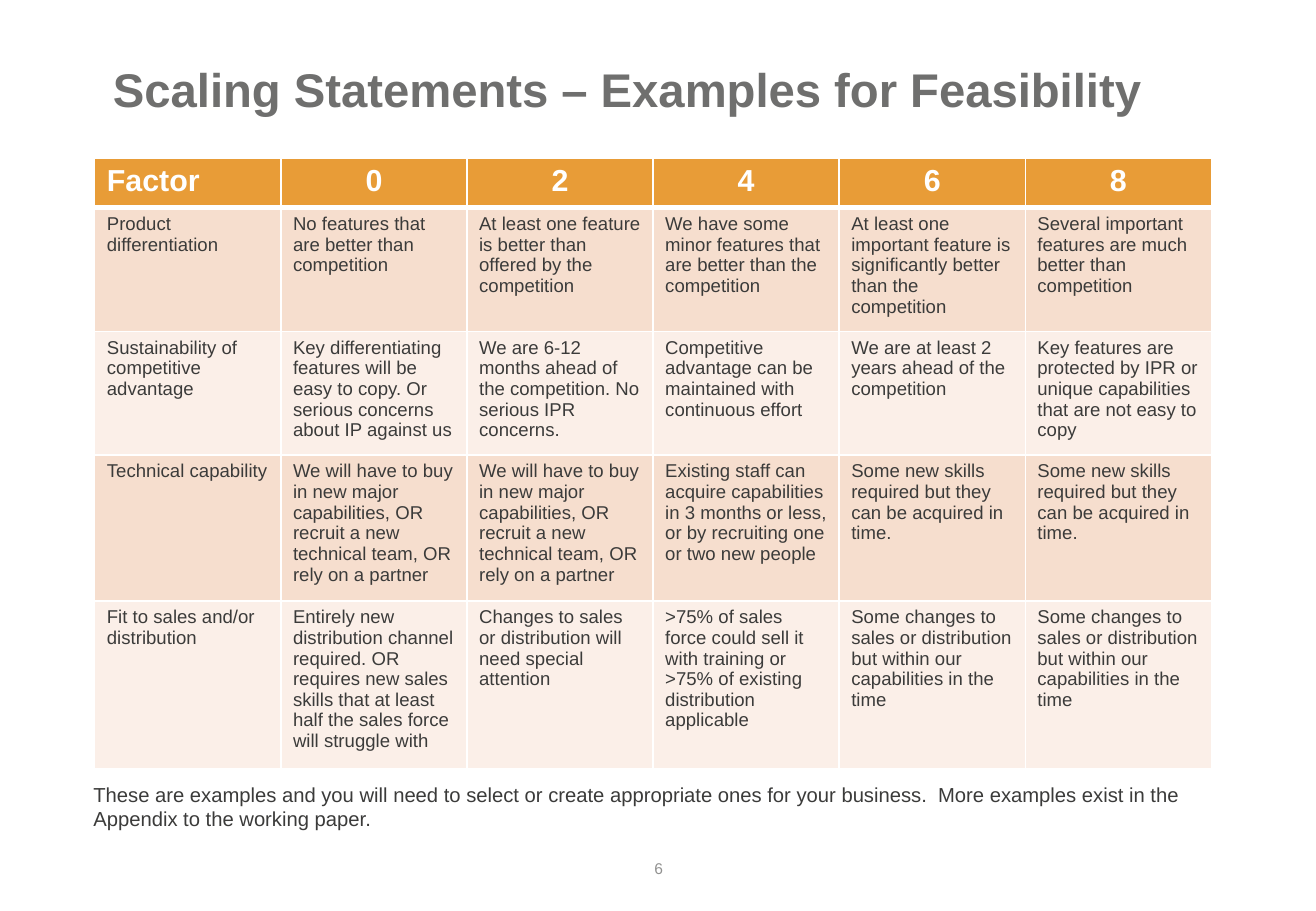
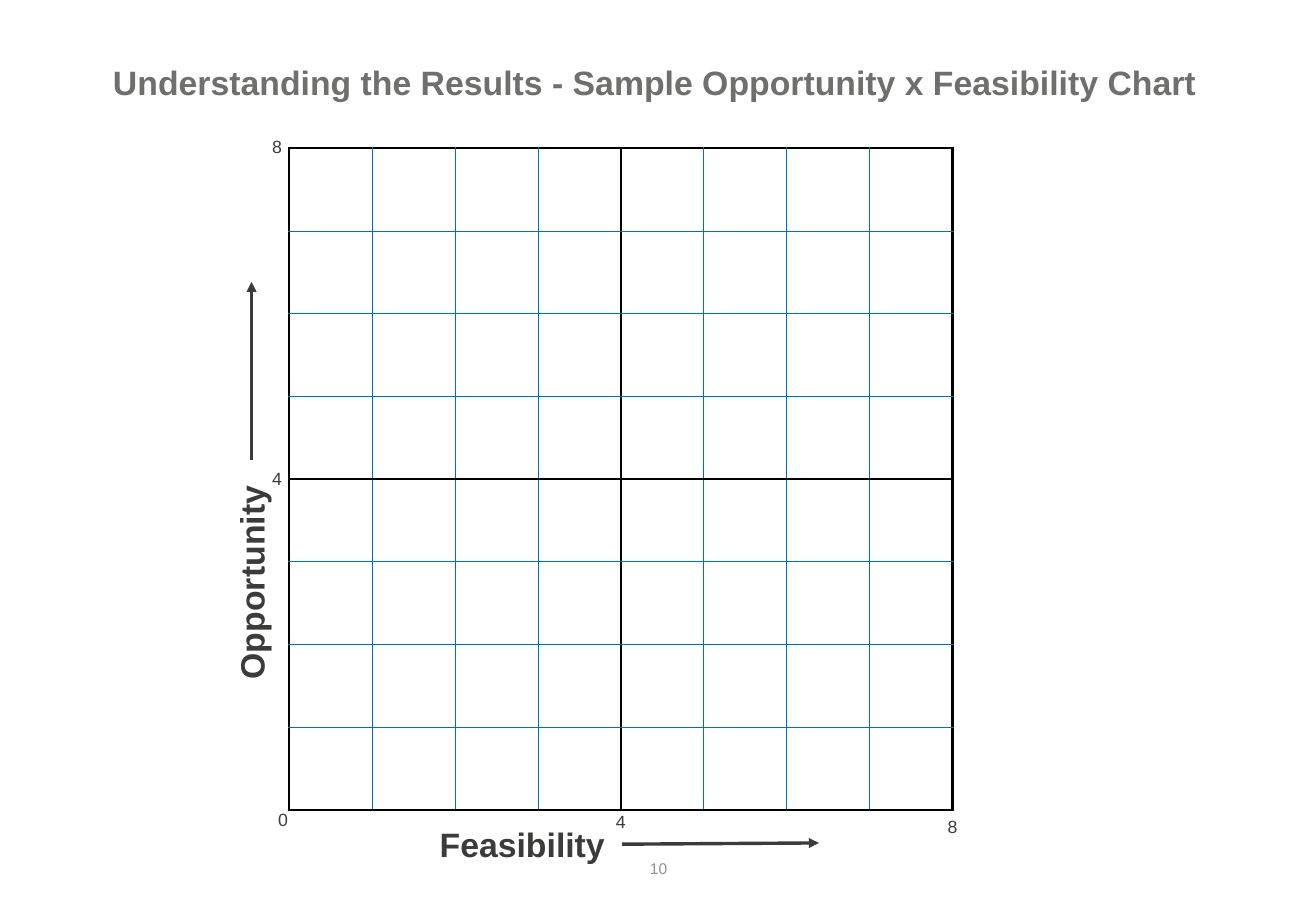
from pptx import Presentation
from pptx.dml.color import RGBColor
from pptx.enum.shapes import MSO_CONNECTOR
from pptx.enum.text import MSO_ANCHOR, MSO_AUTO_SIZE, PP_ALIGN
from pptx.oxml.ns import qn
from pptx.util import Inches, Pt
from lxml.etree import SubElement

FONT = "Arial"
WHITE = RGBColor(0xFF, 0xFF, 0xFF)
BLACK = RGBColor(0x00, 0x00, 0x00)
TITLE_GREY = RGBColor(0x6F, 0x6F, 0x6E)
PAGE_GREY = RGBColor(0x92, 0x92, 0x91)
TEXT = RGBColor(0x3B, 0x3B, 0x3A)
ORANGE = RGBColor(0xE8, 0x9C, 0x37)
PEACH = RGBColor(0xF6, 0xDE, 0xCE)
PALE = RGBColor(0xFB, 0xEF, 0xE8)
BLUE = RGBColor(0x00, 0x70, 0xC0)


def add_text(s, text, x, y, w, h, size, color=TEXT, bold=False, align=PP_ALIGN.LEFT):
    sp = s.shapes.add_textbox(Inches(x), Inches(y), Inches(w), Inches(h))
    sp.text_frame.word_wrap = True
    p = sp.text_frame.paragraphs[0]
    p.text = text
    p.alignment = align
    p.font.name, p.font.size, p.font.bold = FONT, Pt(size), bold
    p.font.color.rgb = color
    return sp


def set_borders(cell, left, right, top, bottom):
    tcPr = cell._tc.get_or_add_tcPr()
    sides = zip(("a:lnL", "a:lnR", "a:lnT", "a:lnB"), (left, right, top, bottom))
    for tag, (color, width) in sides:
        ln = SubElement(tcPr, qn(tag), w=str(Pt(width)))
        fill = SubElement(ln, qn("a:solidFill"))
        SubElement(fill, qn("a:srgbClr"), val=str(color))


prs = Presentation()
prs.slide_width, prs.slide_height = Inches(10.83), Inches(7.5)

slides = []
for title, size, page in (
    ("Scaling Statements – Examples for Feasibility", 28, "6"),
    ("Understanding the Results - Sample Opportunity x Feasibility Chart", 20, "10"),
):
    s = prs.slides.add_slide(prs.slide_layouts[5])
    sp = s.shapes.title
    sp.left, sp.top, sp.width, sp.height = Inches(0.93), Inches(0.5), Inches(9.17), Inches(0.5)
    tf = sp.text_frame
    tf.auto_size = MSO_AUTO_SIZE.NONE
    tf.vertical_anchor = MSO_ANCHOR.TOP
    tf.margin_left = 0
    p = tf.paragraphs[0]
    p.text = title
    p.alignment = PP_ALIGN.LEFT
    p.line_spacing = 0.9
    p.font.name, p.font.size, p.font.bold = FONT, Pt(size), True
    p.font.color.rgb = TITLE_GREY
    sp = add_text(s, page, 4.2, 6.95, 2.44, 0.4, 9.2, PAGE_GREY, align=PP_ALIGN.CENTER)
    sp.text_frame.vertical_anchor = MSO_ANCHOR.MIDDLE
    slides.append(s)

factors_slide, chart_slide = slides

NEW_TEAM = (
    "We will have to buy in new major capabilities, OR recruit a new technical team, "
    "OR rely on a partner"
)
NEW_SKILLS = "Some new skills required but they can be acquired in time."
SOME_CHANGES = "Some changes to sales or distribution but within our capabilities in the time"
rows = (
    ("Factor", "0", "2", "4", "6", "8"),
    (
        "Product differentiation",
        "No features that are better than competition",
        "At least one feature is better than offered by the competition",
        "We have some minor features that are better than the competition",
        "At least one important feature is significantly better than the competition",
        "Several important features are much better than competition",
    ),
    (
        "Sustainability of competitive advantage",
        "Key differentiating features will be easy to copy. Or serious concerns about IP against us",
        "We are 6-12 months ahead of the competition. No serious IPR concerns.",
        "Competitive advantage can be maintained with continuous effort",
        "We are at least 2 years ahead of the competition",
        "Key features are protected by IPR or unique capabilities that are not easy to copy",
    ),
    (
        "Technical capability",
        NEW_TEAM,
        NEW_TEAM,
        "Existing staff can acquire capabilities in 3 months or less, "
        "or by recruiting one or two new people",
        NEW_SKILLS,
        NEW_SKILLS,
    ),
    (
        "Fit to sales and/or distribution",
        "Entirely new distribution channel required. OR requires new sales skills "
        "that at least half the sales force will struggle with",
        "Changes to sales or distribution will need special attention",
        ">75% of sales force could sell it with training or "
        ">75% of existing distribution applicable",
        SOME_CHANGES,
        SOME_CHANGES,
    ),
)
row_heights = (0.41, 0.95, 0.95, 1.12, 1.29)
table = factors_slide.shapes.add_table(
    len(rows), len(rows[0]), Inches(0.78), Inches(1.3), Inches(9.19), Inches(sum(row_heights))
).table
thin, thick = (WHITE, 1), (WHITE, 3)
for r, (texts, height) in enumerate(zip(rows, row_heights)):
    table.rows[r].height = Inches(height)
    header = r == 0
    for c, text in enumerate(texts):
        cell = table.cell(r, c)
        set_borders(cell, thin, thin, thick if r == 1 else thin, thick if header else thin)
        cell.fill.solid()
        cell.fill.fore_color.rgb = ORANGE if header else PEACH if r % 2 else PALE
        p = cell.text_frame.paragraphs[0]
        p.text = text
        p.alignment = PP_ALIGN.CENTER if header and c else PP_ALIGN.LEFT
        p.font.name, p.font.size, p.font.bold = FONT, Pt(18 if header else 11), header
        p.font.color.rgb = WHITE if header else TEXT

add_text(
    factors_slide,
    "These are examples and you will need to select or create appropriate ones for your business.  "
    "More examples exist in the Appendix to the working paper.",
    0.67, 6.39, 9.3, 0.5, 12,
)

STEPS = 8
HALF = STEPS // 2
grid = chart_slide.shapes.add_table(
    STEPS, STEPS, Inches(2.38), Inches(1.22), Inches(5.46), Inches(5.45)
).table
grid.first_row = grid.horz_banding = False
axis, gridline = (BLACK, 1.5), (BLUE, 0.5)
lines = [gridline if i % HALF else axis for i in range(STEPS + 1)]
for r in range(STEPS):
    for c in range(STEPS):
        cell = grid.cell(r, c)
        set_borders(cell, lines[c], lines[c + 1], lines[r], lines[r + 1])
        cell.fill.background()

add_text(chart_slide, "Feasibility", 3.52, 6.73, 1.73, 0.44, 20, bold=True)
sp = add_text(chart_slide, "Opportunity", 1.08, 4.48, 1.98, 0.44, 20, bold=True)
sp.rotation = 270

for x1, y1, x2, y2 in ((5.12, 6.95, 6.74, 6.94), (2.07, 3.79, 2.07, 2.32)):
    arrow = chart_slide.shapes.add_connector(
        MSO_CONNECTOR.STRAIGHT, Inches(x1), Inches(y1), Inches(x2), Inches(y2)
    )
    arrow.line.color.rgb = TEXT
    arrow.line.width = Pt(2)
    SubElement(arrow.line._get_or_add_ln(), qn("a:tailEnd"), type="triangle")
    SubElement(arrow._element.spPr, qn("a:effectLst"))

for text, x, y in (
    ("0", 2.19, 6.61),
    ("4", 4.97, 6.63),
    ("8", 7.7, 6.67),
    ("8", 2.14, 1.07),
    ("4", 2.14, 3.8),
):
    add_text(chart_slide, text, x, y, 0.28, 0.29, 10.5)

prs.save("out.pptx")
